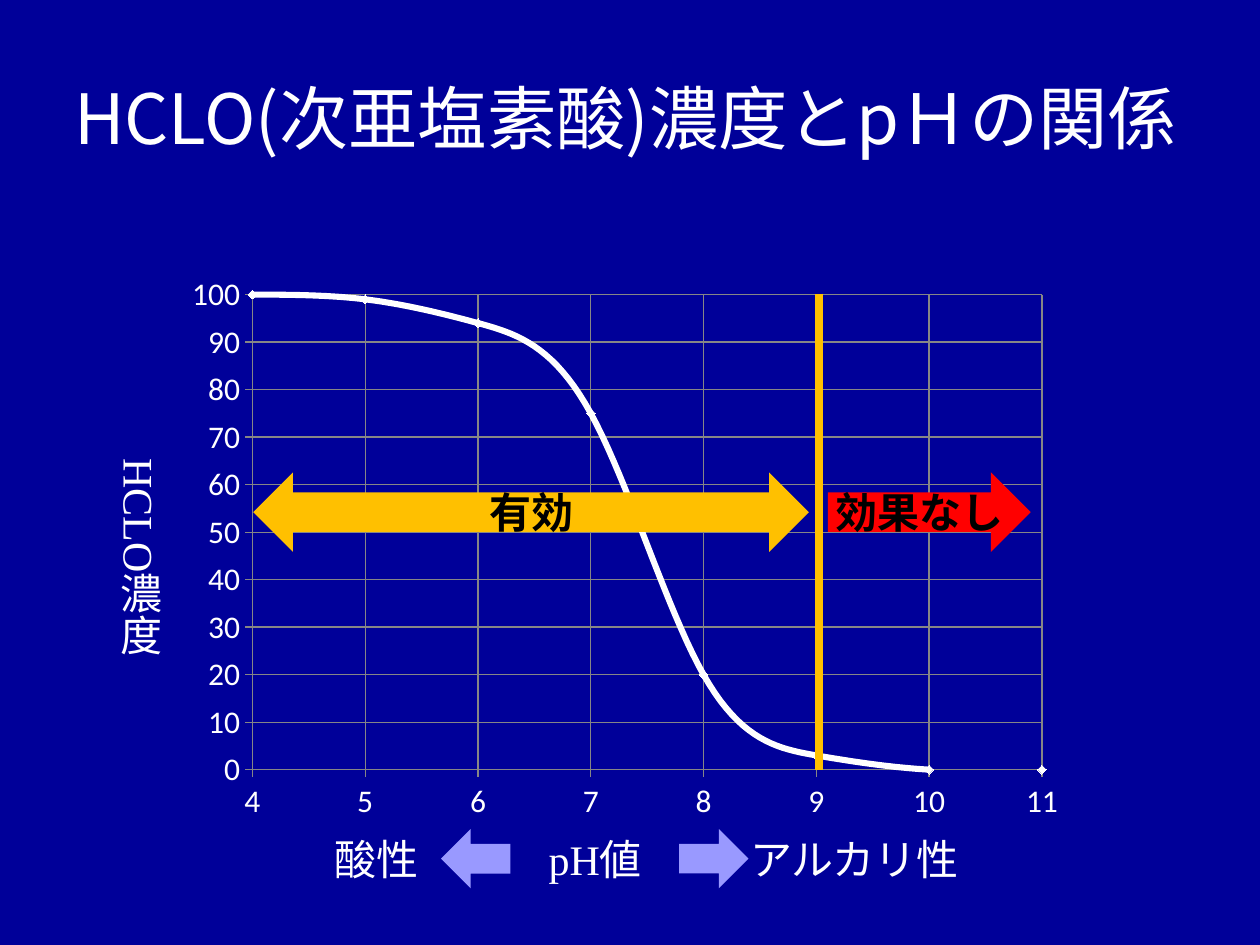
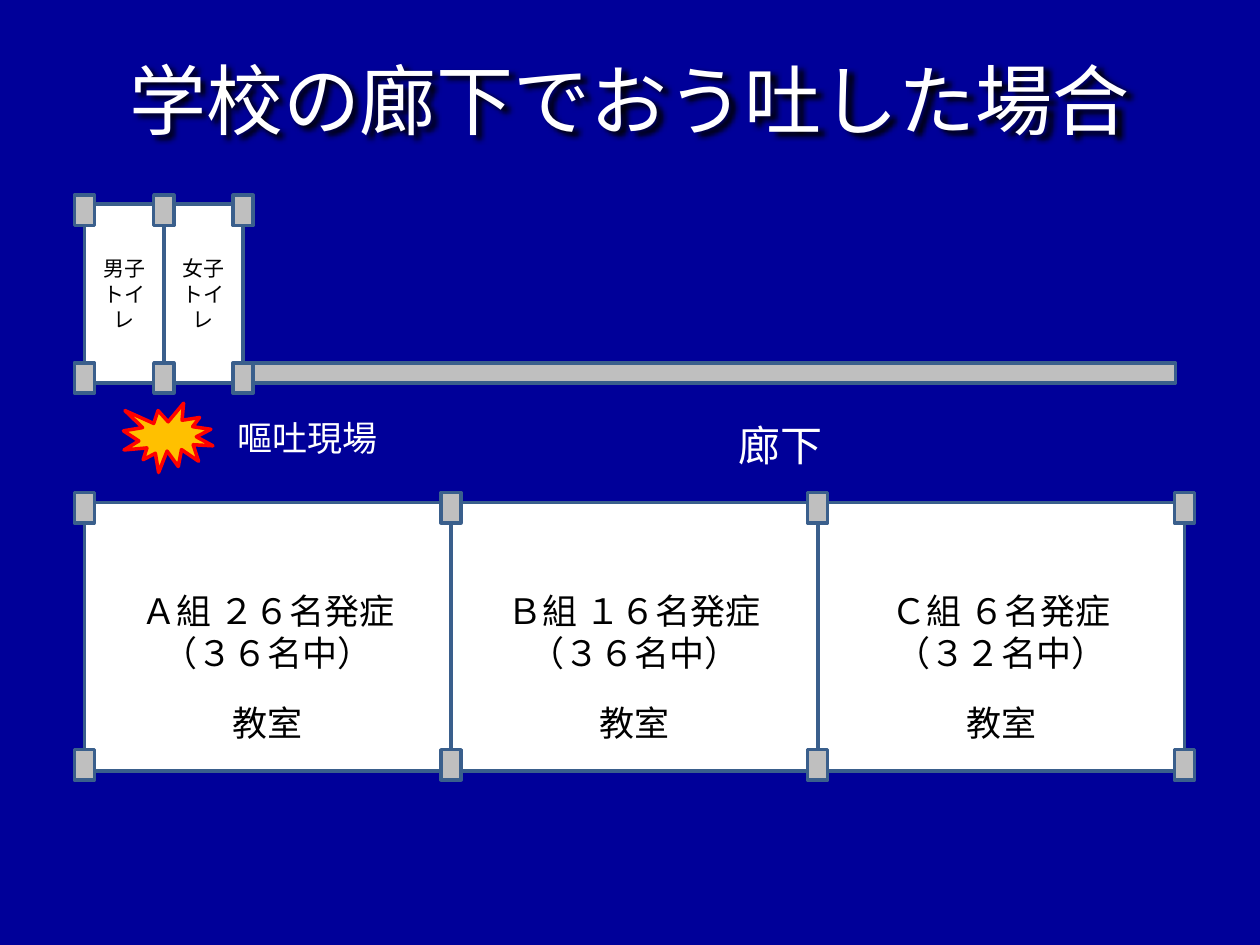
"""Builds two slides on hypochlorous acid and a school corridor case."""
import pptx
import pptx.chart.data
import pptx.dml.color
import pptx.enum.chart
import pptx.enum.shapes
import pptx.enum.text
import pptx.oxml
import pptx.oxml.ns
import pptx.util

Inches = pptx.util.Inches
Pt = pptx.util.Pt
RGBColor = pptx.dml.color.RGBColor
SHAPE = pptx.enum.shapes.MSO_SHAPE
ANCHOR = pptx.enum.text.MSO_ANCHOR

NAVY = RGBColor(0x00, 0x00, 0x99)
WHITE = RGBColor(0xFF, 0xFF, 0xFF)
BLACK = RGBColor(0x00, 0x00, 0x00)
AMBER = RGBColor(0xFF, 0xC0, 0x00)
RED = RGBColor(0xFF, 0x00, 0x00)
LILAC = RGBColor(0x99, 0x99, 0xFF)
GRID = RGBColor(0x86, 0x86, 0x86)
PILLAR = RGBColor(0xBF, 0xBF, 0xBF)
WALL = RGBColor(0x3A, 0x5F, 0x8C)

GOTHIC = "Noto Sans CJK JP"
SERIF = "Times New Roman"
NS = pptx.oxml.ns.nsdecls("a")


def fill_text(frame, lines, size, color, font=GOTHIC, bold=False,
              wrap=True, anchor=ANCHOR.MIDDLE):
    """Write centred lines, one paragraph each."""
    frame.word_wrap = wrap
    frame.vertical_anchor = anchor
    for number, line in enumerate(lines):
        paragraph = frame.add_paragraph() if number else frame.paragraphs[0]
        paragraph.alignment = pptx.enum.text.PP_ALIGN.CENTER
        run = paragraph.add_run()
        run.text = line
        run.font.size = Pt(size)
        run.font.bold = bold
        run.font.color.rgb = color
        run.font.name = font
        run._r.get_or_add_rPr().append(
            pptx.oxml.parse_xml(f'<a:ea {NS} typeface="{GOTHIC}"/>'))


def add_label(slide, box, lines, size, color, **style):
    """Add a text box and return its frame."""
    label = slide.shapes.add_textbox(*map(Inches, box))
    fill_text(label.text_frame, lines, size, color, **style)
    return label.text_frame


def add_block(slide, preset, box, fill, outline=None):
    """Add a flat preset shape with an optional outline."""
    block = slide.shapes.add_shape(preset, *map(Inches, box))
    block.shadow.inherit = False
    block.fill.solid()
    block.fill.fore_color.rgb = fill
    if outline is None:
        block.line.fill.background()
    else:
        block.line.color.rgb = outline
        block.line.width = Pt(2)
    return block


def add_titled_slide(deck, title, box, size):
    """Add a title-only slide and return it with its heading."""
    slide = deck.slides.add_slide(deck.slide_layouts[5])
    heading = slide.shapes.title
    heading.left, heading.top, heading.width, heading.height = map(Inches, box)
    frame = heading.text_frame
    frame.auto_size = pptx.enum.text.MSO_AUTO_SIZE.NONE
    frame.margin_left = frame.margin_right = 0
    fill_text(frame, [title], size, WHITE)
    return slide, heading


def add_heading_shadow(heading):
    """Give an unfilled heading a soft shadow to the lower right."""
    heading.fill.background()
    heading._element.spPr.append(pptx.oxml.parse_xml(
        f'<a:effectLst {NS}><a:outerShdw blurRad="38100" dist="38100" '
        'dir="2700000"><a:srgbClr val="000000"/></a:outerShdw></a:effectLst>'))


def style_axis(axis, low, high, step):
    """Set the scale, grid and ticks of an axis."""
    axis.minimum_scale, axis.maximum_scale = low, high
    axis.major_unit = step
    axis.has_major_gridlines = True
    axis.has_title = False
    axis.major_tick_mark = pptx.enum.chart.XL_TICK_MARK.OUTSIDE
    axis.minor_tick_mark = pptx.enum.chart.XL_TICK_MARK.NONE
    axis.tick_labels.number_format = "0"
    axis.tick_labels.number_format_is_linked = False
    for line in (axis.format.line, axis.major_gridlines.format.line):
        line.color.rgb = GRID
        line.width = Pt(0.75)


def set_plot_area(chart, x, y, w, h):
    """Fix the inner plot area as fractions of the chart."""
    plot_area = chart._chartSpace.chart.plotArea
    for old in plot_area.findall(pptx.oxml.ns.qn("c:layout")):
        plot_area.remove(old)
    places = "".join(f'<c:{tag} val="{value}"/>'
                     for tag, value in zip("xywh", (x, y, w, h)))
    plot_area.insert(0, pptx.oxml.parse_xml(
        f'<c:layout {pptx.oxml.ns.nsdecls("c")}><c:manualLayout>'
        '<c:layoutTarget val="inner"/><c:xMode val="edge"/>'
        f'<c:yMode val="edge"/>{places}</c:manualLayout></c:layout>'))


def add_concentration_chart(slide):
    """Plot HCLO concentration against pH."""
    data = pptx.chart.data.XyChartData()
    concentration = data.add_series("Series 1")
    for ph, percent in enumerate((100, 99, 94, 75, 20, 3, 0, 0), start=4):
        concentration.add_data_point(ph, percent)
    chart = slide.shapes.add_chart(
        pptx.enum.chart.XL_CHART_TYPE.XY_SCATTER_SMOOTH,
        *map(Inches, (1.38, 2.1, 7.17, 4.5)), data).chart
    chart.has_legend = False
    chart.has_title = False
    chart.font.size = Pt(18)
    chart.font.name = "Calibri"
    chart.font.color.rgb = WHITE
    style_axis(chart.category_axis, 4, 11, 1)
    style_axis(chart.value_axis, 0, 100, 10)
    set_plot_area(chart, 0.087, 0.053, 0.874, 0.838)
    plot = chart.plots[0]
    plot.vary_by_categories = False
    curve = plot.series[0]
    curve._element.get_or_add_smooth().val = True
    curve.format.line.color.rgb = WHITE
    curve.format.line.width = Pt(3.5)
    curve.marker.style = pptx.enum.chart.XL_MARKER_STYLE.DIAMOND
    curve.marker.size = 5
    curve.marker.format.fill.solid()
    curve.marker.format.fill.fore_color.rgb = WHITE
    curve.marker.format.line.color.rgb = WHITE


def build_ph_slide(deck):
    """Show the curve, the effective range and the pH scale."""
    slide, _ = add_titled_slide(
        deck, "HCLO(次亜塩素酸)濃度とpＨの関係", (0.12, 0.3, 9.69, 1.25), 39.6)
    add_concentration_chart(slide)

    axis_title = add_label(slide, (0.81, 3.54, 0.61, 1.26), ["HCLO濃度"],
                           24, WHITE, font=SERIF, wrap=False)
    axis_title._txBody.bodyPr.set("vert", "eaVert")

    limit = slide.shapes.add_connector(
        pptx.enum.shapes.MSO_CONNECTOR.STRAIGHT,
        *map(Inches, (6.5, 2.33, 6.5, 6.11)))
    limit.line.color.rgb = AMBER
    limit.line.width = Pt(5)
    limit._element.spPr.append(pptx.oxml.parse_xml(f"<a:effectLst {NS}/>"))

    for left, turn in ((5.39, 0), (3.5, 180)):
        direction = add_block(slide, SHAPE.RIGHT_ARROW,
                              (left, 6.58, 0.55, 0.47), LILAC)
        direction.rotation = turn
    for name, left, width in (("pH値", 3.74, 1.97), ("酸性", 2.48, 1.02),
                              ("アルカリ性", 5.78, 2)):
        add_label(slide, (left, 6.58, width, 0.47), [name], 24, WHITE,
                  font=SERIF, wrap=False)

    for name, preset, left, width, color in (
            ("有効", SHAPE.LEFT_RIGHT_ARROW, 2.01, 4.41, AMBER),
            ("効果なし", SHAPE.RIGHT_ARROW, 6.57, 1.61, RED)):
        effect_range = add_block(slide, preset, (left, 3.75, width, 0.63), color)
        fill_text(effect_range.text_frame, [name], 24, BLACK, font=SERIF,
                  bold=True, wrap=False)


def add_pillars(slide, walls, tops):
    """Place a pillar centred on each wall at each height."""
    for top in tops:
        for wall in walls:
            add_block(slide, SHAPE.RECTANGLE, (wall - 0.08, top, 0.16, 0.24),
                      PILLAR, WALL)


def build_school_slide(deck):
    """Draw the floor plan with the cases in each class."""
    slide, heading = add_titled_slide(
        deck, "学校の廊下でおう吐した場合", (0, 0.31, 10, 0.94), 44)
    add_heading_shadow(heading)

    left, room_width, toilet_width = 0.67, 2.91, 0.63
    room_walls = [left + room_width * i for i in range(4)]
    toilet_walls = [left + toilet_width * i for i in range(3)]
    classes = (("Ａ組 ２６名発症", "（３６名中）"),
               ("Ｂ組 １６名発症", "（３６名中）"),
               ("Ｃ組 ６名発症", "（３２名中）"))

    for wall, cases in zip(room_walls, classes):
        add_block(slide, SHAPE.RECTANGLE, (wall, 3.99, room_width, 2.13),
                  WHITE, WALL)
        add_label(slide, (wall, 4.54, room_width, 0.94), cases, 20, BLACK)
        add_label(slide, (wall + 0.5, 5.52, 1.91, 0.44), ["教室"], 20, BLACK,
                  anchor=ANCHOR.TOP)
    for wall, name in zip(toilet_walls, ("男子トイレ", "女子トイレ")):
        toilet = add_block(slide, SHAPE.RECTANGLE,
                           (wall, 1.62, toilet_width, 1.42), WHITE, WALL)
        fill_text(toilet.text_frame, [name], 12, BLACK)

    add_block(slide, SHAPE.RECTANGLE, (1.93, 2.88, 7.4, 0.16), PILLAR, WALL)
    add_pillars(slide, room_walls, (3.91, 5.95))
    add_pillars(slide, toilet_walls, (1.55, 2.88))

    add_block(slide, SHAPE.EXPLOSION1, (0.98, 3.2, 0.71, 0.55), AMBER, RED)
    add_label(slide, (1.69, 3.28, 1.5, 0.39), ["嘔吐現場"], 20, WHITE)
    add_label(slide, (5.24, 3.28, 1.91, 0.5), ["廊下"], 24, WHITE,
              anchor=ANCHOR.TOP)


def main():
    """Build and save the deck."""
    deck = pptx.Presentation()
    deck.slide_width, deck.slide_height = Inches(10), Inches(7.5)
    backdrop = deck.slide_master.background.fill
    backdrop.solid()
    backdrop.fore_color.rgb = NAVY
    build_ph_slide(deck)
    build_school_slide(deck)
    deck.save("out.pptx")


if __name__ == "__main__":
    main()
